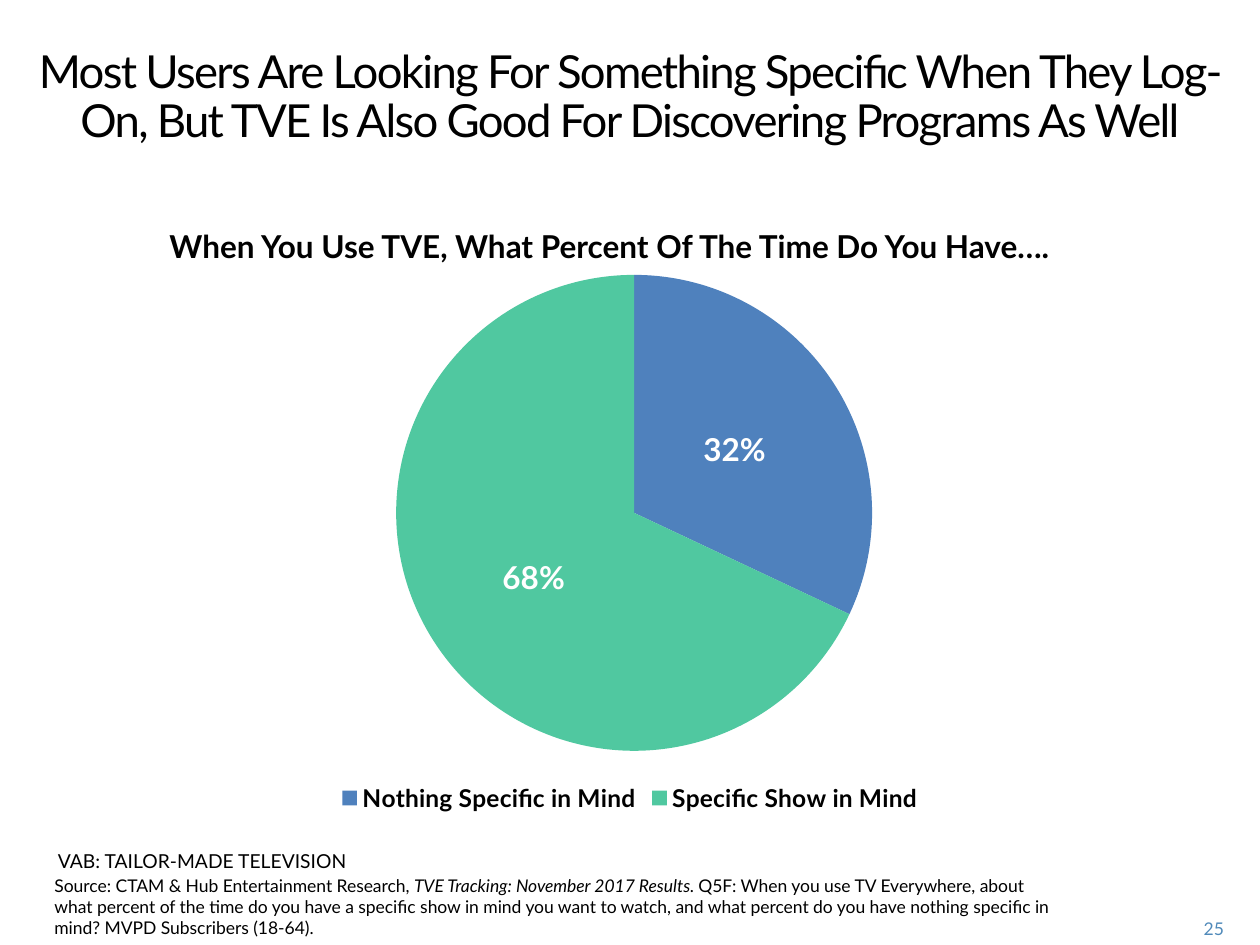
from dataclasses import dataclass

from lxml import etree
from pptx import Presentation
from pptx.chart.data import CategoryChartData
from pptx.dml.color import RGBColor
from pptx.enum.chart import XL_CHART_TYPE, XL_LABEL_POSITION, XL_LEGEND_POSITION
from pptx.enum.text import PP_ALIGN
from pptx.oxml.ns import qn
from pptx.util import Pt

PIE = XL_CHART_TYPE.PIE
LABEL_CENTER = XL_LABEL_POSITION.CENTER
LEGEND_BOTTOM = XL_LEGEND_POSITION.BOTTOM
LEFT, CENTER, RIGHT = PP_ALIGN.LEFT, PP_ALIGN.CENTER, PP_ALIGN.RIGHT


@dataclass(frozen=True)
class Theme:
    face: str = "Lato"
    ink: RGBColor = RGBColor(0, 0, 0)
    paper: RGBColor = RGBColor(255, 255, 255)
    page: RGBColor = RGBColor(0x50, 0x8A, 0xBA)
    slices: tuple = (RGBColor(0x4F, 0x81, 0xBD), RGBColor(0x50, 0xC8, 0xA0))
    title: int = 26
    title_leading: int = 28
    heading: int = 18
    legend: int = 14
    report: int = 11
    small: int = 10


THEME = Theme()


def style_font(font, size, color=THEME.ink, **extra):
    for attribute, value in {"name": THEME.face, "size": Pt(size), **extra}.items():
        setattr(font, attribute, value)
    font.color.rgb = color


def add_text(slide, box, runs, size, align=LEFT, color=THEME.ink, **extra):
    frame = slide.shapes.add_textbox(*map(Pt, box)).text_frame
    frame.word_wrap = True
    paragraph = frame.paragraphs[0]
    paragraph.alignment = align
    for text, italic in runs:
        run = paragraph.add_run()
        run.text = text
        style_font(run.font, size, color, italic=italic, **extra)
    return paragraph


def add_title(slide, box):
    title = add_text(slide, box, [(
        "Most Users Are Looking For Something Specific When They Log-On, "
        "But TVE Is Also Good For Discovering Programs As Well", False)],
        THEME.title, CENTER)
    title.line_spacing = Pt(THEME.title_leading)
    for run in title.runs:
        run.font._element.set("spc", "-100")


def place_plot(chart, **fractions):
    plot_area = chart._chartSpace.chart.plotArea
    for old_layout in plot_area.findall(qn("c:layout")):
        plot_area.remove(old_layout)
    layout = etree.Element(qn("c:layout"))
    manual = etree.SubElement(layout, qn("c:manualLayout"))
    settings = {"layoutTarget": "inner", "xMode": "edge", "yMode": "edge", **fractions}
    for tag, value in settings.items():
        etree.SubElement(manual, qn(f"c:{tag}")).set("val", str(value))
    plot_area.insert(0, layout)


def add_intent_pie(slide, box):
    intents = CategoryChartData(number_format="0%")
    intents.categories = ["Nothing Specific in Mind", "Specific Show in Mind"]
    intents.add_series("Series 1", [0.32, 0.68])
    chart = slide.shapes.add_chart(PIE, *map(Pt, box), intents).chart
    chart.has_title = False
    style_font(chart.font, THEME.heading)
    place_plot(chart, x=0.22, y=0.03, w=0.57, h=0.85)

    chart.has_legend = True
    legend = chart.legend
    legend.position = LEGEND_BOTTOM
    legend.include_in_layout = False
    style_font(legend.font, THEME.legend, bold=True)

    plot = chart.plots[0]
    plot.vary_by_categories = True
    for index, color in enumerate(THEME.slices):
        fill = plot.series[0].points[index].format.fill
        fill.solid()
        fill.fore_color.rgb = color

    plot.has_data_labels = True
    labels = plot.data_labels
    label_format = {"show_value": True, "show_percentage": False,
                    "number_format": "0%", "number_format_is_linked": False,
                    "position": LABEL_CENTER}
    for attribute, value in label_format.items():
        setattr(labels, attribute, value)
    style_font(labels.font, THEME.heading, THEME.paper, bold=True)


def add_footer(slide, box):
    left, top, width, height = box
    add_text(slide, (left + 2, top, 222, 34),
             [("VAB: TAILOR-MADE TELEVISION", False)], THEME.report)
    add_text(slide, (left, top + 15, 583, height - 15), [
        ("Source: CTAM & Hub Entertainment Research, ", False),
        ("TVE Tracking: November 2017 Results. ", True),
        ("Q5F: When you use TV Everywhere, about what percent of the time do you "
         "have a specific show in mind you want to watch, and what percent do you "
         "have nothing specific in mind? MVPD Subscribers (18-64).", False)],
        THEME.small)
    add_text(slide, (left + width - 44, top + 39.5, 44, 18),
             [("25", False)], THEME.small, RIGHT, THEME.page)


def main():
    deck = Presentation()
    deck.slide_width, deck.slide_height = Pt(720), Pt(540)
    slide = deck.slides.add_slide(deck.slide_layouts[6])
    add_title(slide, (12, 24, 696, 84))
    add_text(slide, (78, 126, 540.5, 29),
             [("When You Use TVE, What Percent Of The Time Do You Have….", False)],
             THEME.heading, CENTER, bold=True)
    add_intent_pie(slide, (120, 147.5, 480, 320))
    add_footer(slide, (24, 481.7, 682.5, 58))
    deck.save("out.pptx")


if __name__ == "__main__":
    main()
